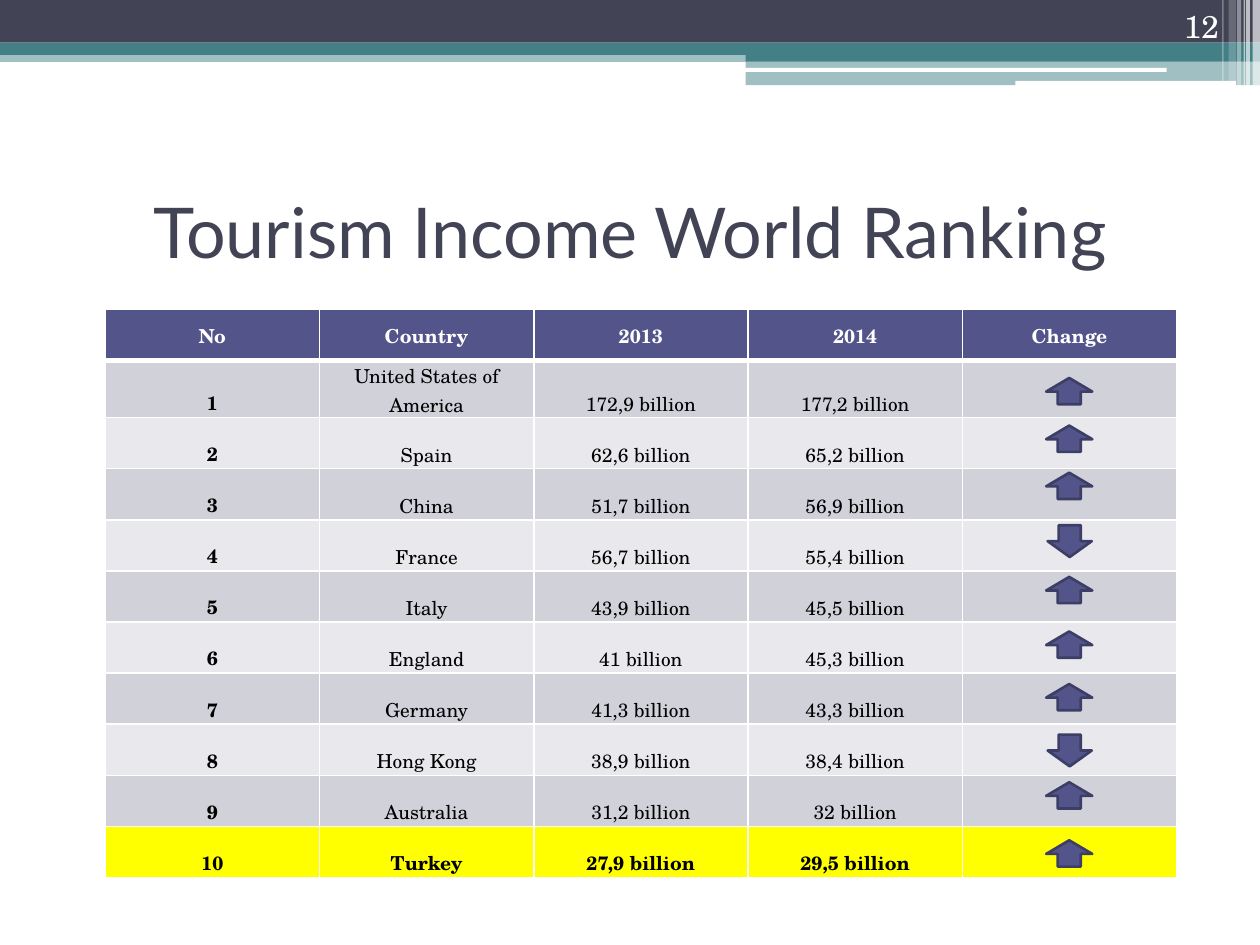
import lxml.etree
import pptx
import pptx.dml.color
import pptx.enum.shapes
import pptx.enum.text
import pptx.oxml.ns
import pptx.util

Cm = pptx.util.Cm
Pt = pptx.util.Pt
RGBColor = pptx.dml.color.RGBColor
MSO_SHAPE = pptx.enum.shapes.MSO_SHAPE
ANCHOR = pptx.enum.text.MSO_ANCHOR
ALIGN = pptx.enum.text.PP_ALIGN
qn = pptx.oxml.ns.qn

WHITE = RGBColor(0xFF, 0xFF, 0xFF)
BLACK = RGBColor(0, 0, 0)
SLATE = RGBColor(0x42, 0x44, 0x56)
TEAL = RGBColor(0x43, 0x80, 0x86)
INDIGO = RGBColor(0x53, 0x54, 0x8A)
DARK_INDIGO = RGBColor(0x3D, 0x3E, 0x66)
DARK_BAND = RGBColor(0xD1, 0xD1, 0xDA)
LIGHT_BAND = RGBColor(0xE9, 0xE9, 0xED)
YELLOW = RGBColor(0xFF, 0xFF, 0)

TITLE_FONT = "Lato"
BODY_FONT = "TeX Gyre Schola"

HEADER_BARS = [
    (0, 1.02, 25.4, 0.23, TEAL, 50),
    (0, 0, 25.4, 0.86, SLATE, 100),
    (0, 0.86, 25.4, 0.25, TEAL, 100),
    (15.03, 0.99, 10.37, 0.25, TEAL, 100),
    (15.03, 1.24, 10.37, 0.48, TEAL, 50),
]
WHITE_PILLS = [(15.01, 1.37, 8.51, 0.08), (20.47, 1.63, 4.45, 0.1)]
EDGE_STRIPES = [
    (25.25, 0.15, 1.73, 65),
    (25.12, 0.08, 1.73, 65),
    (25.07, 0.03, 1.73, 60),
    (24.94, 0.08, 1.73, 40),
    (24.77, 0.15, 1.63, 20),
    (24.64, 0.03, 1.63, 30),
]

HEADINGS = ["No", "Country", "2013", "2014", "Change"]
RANKING = [
    ("United States of America", "172,9 billion", "177,2 billion"),
    ("Spain", "62,6 billion", "65,2 billion"),
    ("China", "51,7 billion", "56,9 billion"),
    ("France", "56,7 billion", "55,4 billion"),
    ("Italy", "43,9 billion", "45,5 billion"),
    ("England", "41 billion", "45,3 billion"),
    ("Germany", "41,3 billion", "43,3 billion"),
    ("Hong Kong", "38,9 billion", "38,4 billion"),
    ("Australia", "31,2 billion", "32 billion"),
    ("Turkey", "27,9 billion", "29,5 billion"),
]
CHANGE_TOPS = [7.62, 8.58, 9.53, 10.59, 11.63, 12.73, 13.79, 14.81, 15.77, 16.94]
FALLING_RANKS = {4, 8}


def add_filled(slide, preset, left, top, width, height, color, opacity=100):
    """Add a borderless preset shape, translucent when opacity is under 100."""
    shape = slide.shapes.add_shape(preset, Cm(left), Cm(top), Cm(width), Cm(height))
    shape.shadow.inherit = False
    shape.line.fill.background()
    shape.fill.solid()
    shape.fill.fore_color.rgb = color
    if opacity < 100:
        tint = shape.element.spPr.find(qn("a:solidFill")).find(qn("a:srgbClr"))
        lxml.etree.SubElement(tint, qn("a:alpha"), val=str(opacity * 1000))
    return shape


def style_paragraph(paragraph, font_name, size, color, align, bold=False):
    """Set the font and alignment of a paragraph."""
    paragraph.alignment = align
    paragraph.font.name = font_name
    paragraph.font.size = Pt(size)
    paragraph.font.color.rgb = color
    paragraph.font.bold = bold


def add_label(slide, text, box, anchor, *style):
    """Add a one-paragraph text box."""
    frame = slide.shapes.add_textbox(*map(Cm, box)).text_frame
    frame.word_wrap = True
    frame.vertical_anchor = anchor
    frame.text = text
    style_paragraph(frame.paragraphs[0], *style)


def add_header(slide):
    """Draw the bands, pills and stripes along the top edge."""
    for bar in HEADER_BARS:
        add_filled(slide, MSO_SHAPE.RECTANGLE, *bar)
    for pill in WHITE_PILLS:
        add_filled(slide, MSO_SHAPE.ROUNDED_RECTANGLE, *pill, WHITE)
    for left, width, height, opacity in EDGE_STRIPES:
        add_filled(slide, MSO_SHAPE.RECTANGLE, left, 0, width, height, WHITE, opacity)


def set_borders(cell, top, bottom):
    """Give a cell white borders, with top and bottom widths in points."""
    properties = cell._tc.get_or_add_tcPr()
    for side, width in (("L", 1), ("R", 1), ("T", top), ("B", bottom)):
        border = lxml.etree.SubElement(properties, qn(f"a:ln{side}"), w=str(Pt(width)))
        paint = lxml.etree.SubElement(border, qn("a:solidFill"))
        lxml.etree.SubElement(paint, qn("a:srgbClr"), val=str(WHITE))


def row_fill(rank):
    """Return the fill of a table row, with the headings at rank 0."""
    if rank == 0:
        return INDIGO
    if rank == len(RANKING):
        return YELLOW
    return DARK_BAND if rank % 2 else LIGHT_BAND


def fill_cell(cell, text, rank, bold):
    """Write and format one cell of the ranking."""
    set_borders(cell, 3 if rank == 1 else 1, 3 if rank == 0 else 1)
    cell.fill.solid()
    cell.fill.fore_color.rgb = row_fill(rank)
    cell.margin_left = cell.margin_right = cell.margin_top = Cm(0.03)
    cell.margin_bottom = 0
    cell.vertical_anchor = ANCHOR.BOTTOM if rank else ANCHOR.MIDDLE
    cell.text = text
    style_paragraph(cell.text_frame.paragraphs[0], BODY_FONT, 11,
                    BLACK if rank else WHITE, ALIGN.CENTER, bold)


def add_ranking(slide):
    """Add the table of countries and their tourism income."""
    rows = [HEADINGS]
    rows += [(str(rank), *entry, "") for rank, entry in enumerate(RANKING, 1)]
    table = slide.shapes.add_table(len(rows), len(HEADINGS), Cm(2.12), Cm(6.24),
                                   Cm(21.6), Cm(11.45)).table
    for column in table.columns:
        column.width = Cm(4.32)
    for rank, texts in enumerate(rows):
        table.rows[rank].height = Cm(1.15 if rank == 1 else 1.03)
        for position, text in enumerate(texts):
            bold = rank in (0, len(RANKING)) or position == 0
            fill_cell(table.cell(rank, position), text, rank, bold)


def add_change_arrow(slide, rank, top):
    """Add the arrow that tells whether a country's income rose or fell."""
    if rank in FALLING_RANKS:
        arrow = add_filled(slide, MSO_SHAPE.DOWN_ARROW, 21.12, top, 0.89, 0.64, INDIGO)
    else:
        arrow = add_filled(slide, MSO_SHAPE.UP_ARROW, 21.09, top, 0.93, 0.53, INDIGO)
        arrow.adjustments[1] = 0.52
    arrow.line.color.rgb = DARK_INDIGO
    arrow.line.width = Pt(1.5)


def main():
    """Build the slide and save it."""
    deck = pptx.Presentation()
    deck.slide_width, deck.slide_height = Cm(25.4), Cm(19.05)
    slide = deck.slides.add_slide(deck.slide_layouts[6])
    add_header(slide)
    add_label(slide, "Tourism Income World Ranking", (1.27, 3.16, 22.86, 2.97),
              ANCHOR.MIDDLE, TITLE_FONT, 40, SLATE, ALIGN.CENTER)
    add_ranking(slide)
    add_label(slide, "12", (22.71, 0, 2.11, 1.02),
              ANCHOR.BOTTOM, BODY_FONT, 18, WHITE, ALIGN.RIGHT)
    for rank, top in enumerate(CHANGE_TOPS, 1):
        add_change_arrow(slide, rank, top)
    deck.save("out.pptx")


if __name__ == "__main__":
    main()
